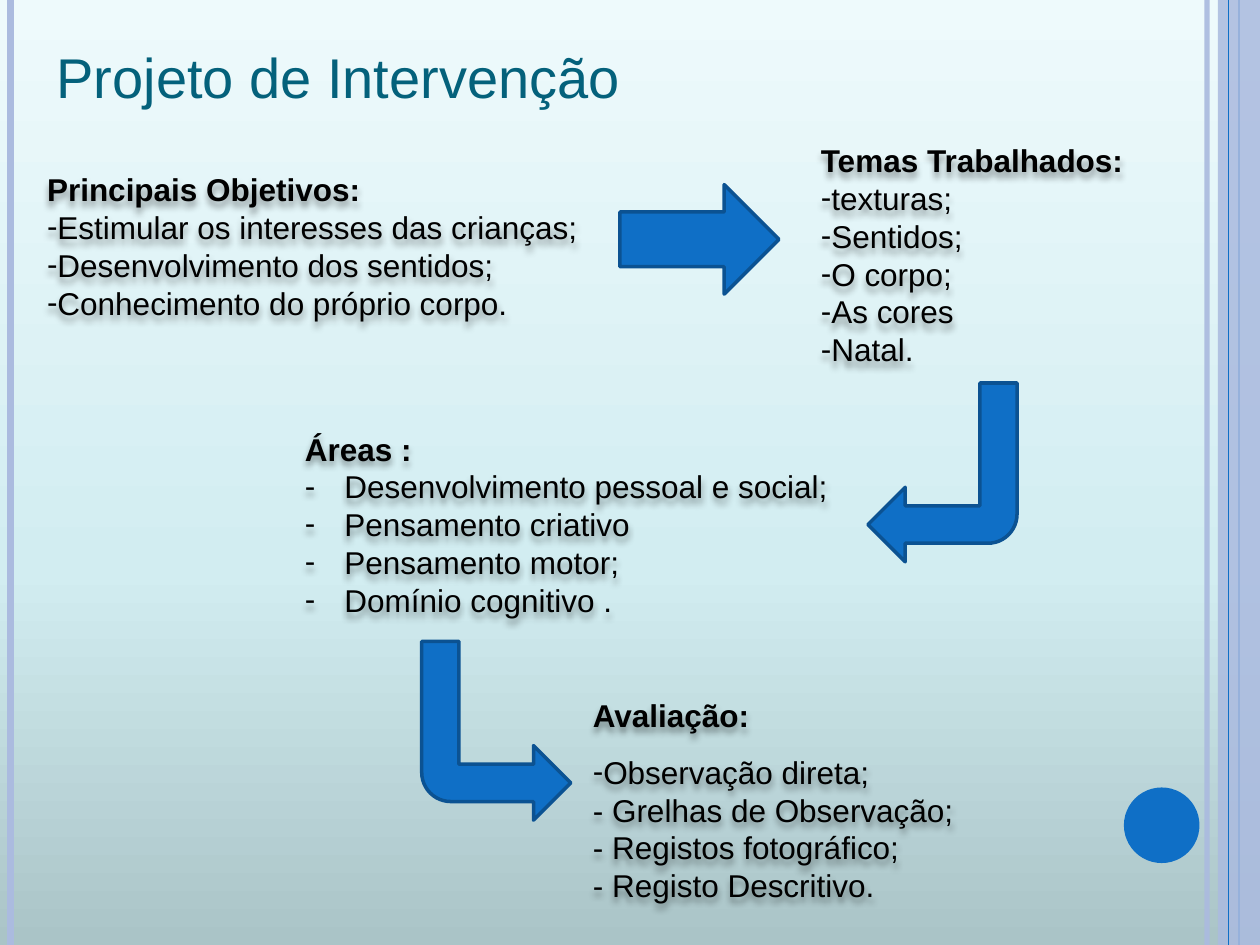
from copy import deepcopy

from lxml.etree import SubElement
from pptx import Presentation
from pptx.dml.color import RGBColor
from pptx.enum.shapes import MSO_CONNECTOR, MSO_SHAPE
from pptx.enum.text import MSO_AUTO_SIZE, PP_ALIGN
from pptx.oxml.ns import qn
from pptx.util import Pt

THEME = {
    "blue": RGBColor.from_string("0F6FC6"),
    "edge": RGBColor.from_string("0B5292"),
    "pale": RGBColor.from_string("ABBBDF"),
    "teal": RGBColor.from_string("04617B"),
    "black": RGBColor.from_string("000000"),
    "sky": [(0, "AAC4C7"), (0.4, "D2EDF1"), (1, "EEFAFC")],
    "font": "Arial",
    "title": Pt(32),
    "body": Pt(18),
}
HIGH = 540
HANG = 22.5

deck = Presentation()
deck.slide_width, deck.slide_height = Pt(720), Pt(HIGH)
slide = deck.slides.add_slide(deck.slide_layouts[6])
shapes = slide.shapes


def fade(fill, part):
    """Set the opacity, in percent, of a solid fill."""
    color = part.find(".//" + qn("a:srgbClr"))
    SubElement(color, qn("a:alpha")).set("val", str(fill * 1000))


def add_text(box, lines):
    """Make a text box from (text, format, paragraph, indent, bullet) lines."""
    label = shapes.add_textbox(*map(Pt, box))
    frame = label.text_frame
    frame.word_wrap = True
    for i, (text, font, para, hang, dash) in enumerate(lines):
        line = frame.paragraphs[0] if i == 0 else frame.add_paragraph()
        run = line.add_run()
        run.text = text
        run.font.color.rgb = font["color"]
        for name in ("name", "size", "bold"):
            setattr(run.font, name, font[name])
        for name, value in para.items():
            setattr(line, name, value)
        props = line._p.get_or_add_pPr()
        props.set("marL", str(Pt(hang)))
        props.set("indent", str(-Pt(hang)))
        if dash:
            SubElement(props, qn("a:buFont")).set("typeface", THEME["font"])
            SubElement(props, qn("a:buChar")).set("char", "-")
    return label


# Background, dark at the foot
back = slide.background.fill
back.gradient()
back.gradient_angle = 90
stops = back.gradient_stops[0]._gs.getparent()
stops.append(deepcopy(stops[-1]))
for stop, (place, color) in zip(back.gradient_stops, THEME["sky"]):
    stop.position = place
    stop.color.rgb = RGBColor.from_string(color)

# Side rules, with the right band between them
rules = [(689.75, "pale", 3, 93), (6, "pale", 4.5, 100),
         (708, "blue", 1.5, 100), (702, "blue", 0.75, 100)]
for i, (x, color, width, alpha) in enumerate(rules):
    if i == 3:
        band = shapes.add_shape(MSO_SHAPE.RECTANGLE, Pt(696), 0, Pt(24), Pt(HIGH))
        band.shadow.inherit = False
        band.fill.solid()
        band.fill.fore_color.rgb = THEME["pale"]
        band.line.fill.background()
        fade(87, band._element.spPr)
    rule = shapes.add_connector(MSO_CONNECTOR.STRAIGHT, Pt(x), 0, Pt(x), Pt(HIGH))
    rule.line.color.rgb = THEME[color]
    rule.line.width = Pt(width)
    fade(alpha, rule._element.spPr)
    SubElement(rule._element.spPr, qn("a:effectLst"))

dot = shapes.add_shape(MSO_SHAPE.OVAL, Pt(642.25), Pt(450), Pt(43.2), Pt(43.2))
dot.shadow.inherit = False
dot.fill.solid()
dot.fill.fore_color.rgb = THEME["blue"]
dot.line.fill.background()

# Title
plain = {"name": THEME["font"], "size": THEME["body"], "bold": False,
         "color": THEME["black"]}
bold = {**plain, "bold": True}
large = {**plain, "size": THEME["title"], "color": THEME["teal"]}
title = add_text((25.2, 20.9, 339, 46), [("Projeto de Intervenção", large, {}, 0, False)])
title.text_frame.word_wrap = False
title.text_frame.auto_size = MSO_AUTO_SIZE.SHAPE_TO_FIT_TEXT

# Four steps of the project
even = {"alignment": PP_ALIGN.JUSTIFY}
loose = {**even, "line_spacing": 1.5}
steps = [
    ((19.8, 83, 317.5, 108.7), [
        ("Principais Objetivos:", bold, loose, 0, False),
        ("Estimular os interesses das crianças;", plain, even, 0, True),
        ("Desenvolvimento dos sentidos;", plain, even, 0, True),
        ("Conhecimento do próprio corpo.", plain, even, 0, True)]),
    ((462, 77.2, 193, 138.2), [
        ("Temas Trabalhados:", bold, even, 0, False),
        *[(text, plain, even, 0, True) for text in
          ("texturas;", "Sentidos;", "O corpo;", "As cores", "Natal.")]]),
    ((167.2, 241.9, 323.3, 118.8), [
        ("Áreas :", bold, {}, 0, False),
        *[(text, plain, {}, HANG, True) for text in
          ("Desenvolvimento pessoal e social;", "Pensamento criativo",
           "Pensamento motor;", "Domínio cognitivo .")]]),
    ((331.7, 383.4, 232.6, 138.2), [
        ("Avaliação:", bold, loose, 0, False),
        ("Observação direta;", plain, loose, 0, True),
        *[(text, plain, {}, HANG, False) for text in
          ("- Grelhas de Observação;", "- Registos fotográfico;",
           "- Registo Descritivo.")]]),
]
for box, lines in steps:
    label = add_text(box, lines)
    label.shadow.inherit = False
    effect = label._element.spPr.find(qn("a:effectLst"))
    shade = SubElement(effect, qn("a:outerShdw"))
    for name, value in {"blurRad": Pt(4), "dist": Pt(3), "dir": 5400000,
                        "algn": "t", "rotWithShape": 0}.items():
        shade.set(name, str(value))
    tint = SubElement(shade, qn("a:srgbClr"))
    tint.set("val", str(THEME["black"]))
    SubElement(tint, qn("a:alpha")).set("val", "40000")

# Arrows from step to step
bend = (0.25, 0.25, 0.25, 0.195)
arrows = [
    (MSO_SHAPE.BENT_ARROW, (496, 218.9, 85.2, 102.2), bend, ("flipH", "flipV")),
    (MSO_SHAPE.RIGHT_ARROW, (354.2, 105.5, 90.9, 62.6), (), ()),
    (MSO_SHAPE.BENT_ARROW, (241, 366.5, 85.2, 102.2), bend, ("flipV",)),
]
for kind, box, bends, flips in arrows:
    arrow = shapes.add_shape(kind, *map(Pt, box))
    arrow.shadow.inherit = False
    arrow.fill.solid()
    arrow.fill.fore_color.rgb = THEME["blue"]
    arrow.line.color.rgb = THEME["edge"]
    arrow.line.width = Pt(2)
    for i, value in enumerate(bends):
        arrow.adjustments[i] = value
    for flip in flips:
        arrow._element.spPr.xfrm.set(flip, "1")

deck.save("out.pptx")
